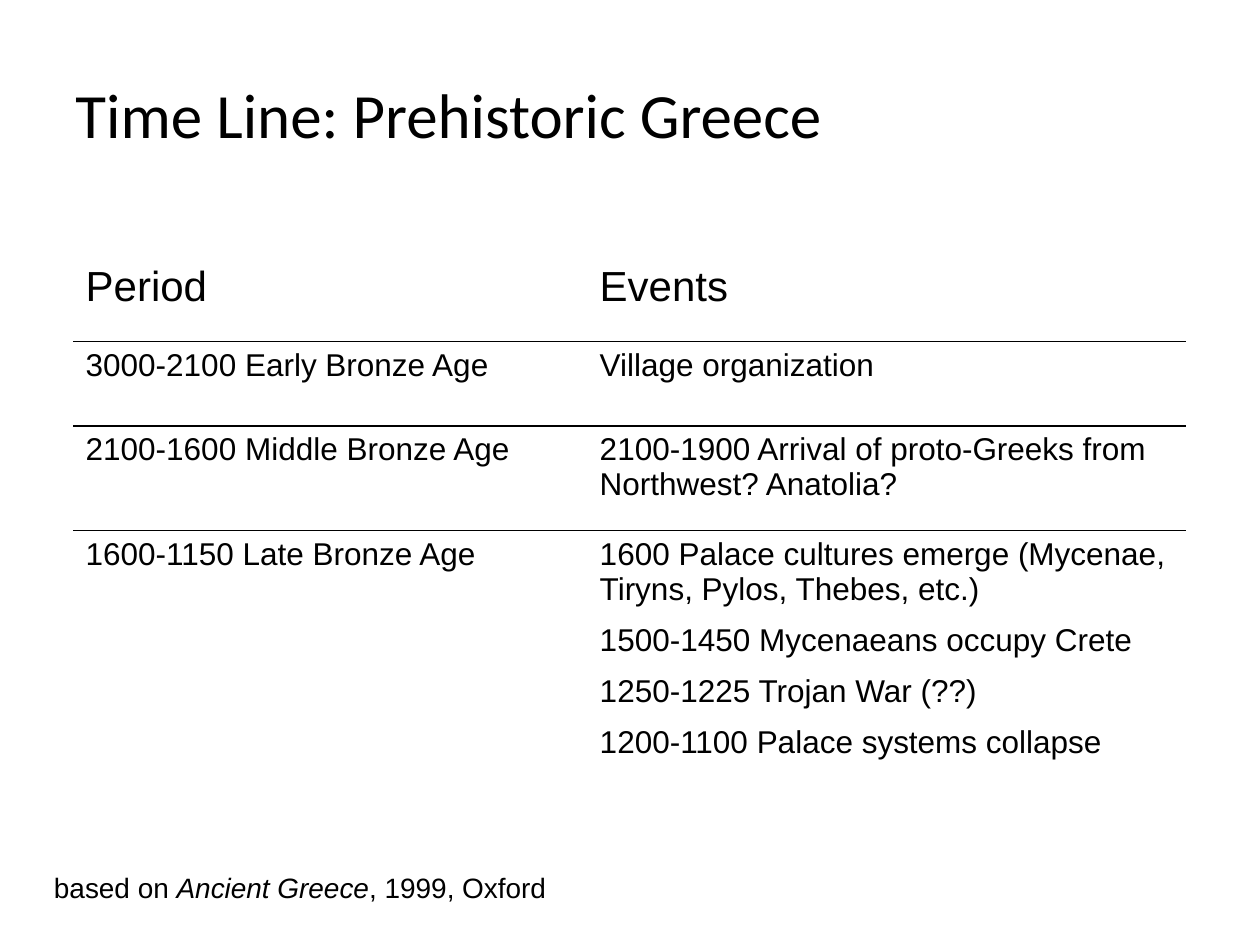
from lxml.etree import SubElement
from pptx import Presentation
from pptx.dml.color import RGBColor
from pptx.enum.text import MSO_ANCHOR
from pptx.oxml.ns import qn
from pptx.util import Inches, Pt

BLACK = RGBColor(0, 0, 0)

TITLE = "Time Line: Prehistoric Greece"
HEADINGS = ("Period", ["Events"])
PERIODS = [
    ("3000-2100 Early Bronze Age", ["Village organization"]),
    ("2100-1600 Middle Bronze Age",
     ["2100-1900 Arrival of proto-Greeks from Northwest? Anatolia?"]),
    ("1600-1150 Late Bronze Age",
     ["1600 Palace cultures emerge (Mycenae, Tiryns, Pylos, Thebes, etc.)",
      "1500-1450 Mycenaeans occupy Crete",
      "1250-1225 Trojan War (??)",
      "1200-1100 Palace systems collapse"]),
]
CREDIT = [("based on ", False), ("Ancient Greece", True), (", 1999, Oxford", False)]

COLUMN_WIDTHS = (4.08, 4.75)
ROW_HEIGHTS = (0.67, 0.67, 0.83, 2.05)
TABLE_LEFT, TABLE_TOP = 0.58, 2.04


def write(frame, paragraphs, size, font="Arial", gap=0):
    """Fill a text frame; each paragraph is a list of (text, italic) runs."""
    for index, runs in enumerate(paragraphs):
        paragraph = frame.paragraphs[0] if index == 0 else frame.add_paragraph()
        if index:
            paragraph.space_before = Pt(gap)
        for text, italic in runs:
            run = paragraph.add_run()
            run.text = text
            run.font.name = font
            run.font.size = Pt(size)
            run.font.bold = False
            run.font.italic = italic
            run.font.color.rgb = BLACK


def add_text(slide, box, runs, wrap=True, anchor=MSO_ANCHOR.TOP, **text_format):
    frame = slide.shapes.add_textbox(*map(Inches, box)).text_frame
    frame.word_wrap = wrap
    frame.vertical_anchor = anchor
    write(frame, [runs], **text_format)


def set_borders(cell, ruled_sides):
    """Rule the given sides (T, B) in black and clear the others."""
    properties = cell._tc.get_or_add_tcPr()
    for position, side in enumerate("LRTB"):
        line = SubElement(properties, qn(f"a:ln{side}"), w=str(Pt(1)))
        if side in ruled_sides:
            fill = SubElement(line, qn("a:solidFill"))
            SubElement(fill, qn("a:srgbClr"), val=str(BLACK))
        else:
            SubElement(line, qn("a:noFill"))
        properties.insert(position, line)


def add_timeline(slide):
    rows = [HEADINGS, *PERIODS]
    table = slide.shapes.add_table(
        len(rows), len(COLUMN_WIDTHS), Inches(TABLE_LEFT), Inches(TABLE_TOP),
        Inches(sum(COLUMN_WIDTHS)), Inches(sum(ROW_HEIGHTS))).table
    table.first_row = table.horz_banding = False
    for column, width in zip(table.columns, COLUMN_WIDTHS):
        column.width = Inches(width)
    for row, height in zip(table.rows, ROW_HEIGHTS):
        row.height = Inches(height)

    for row_index, (period, events) in enumerate(rows):
        ruled_sides = ("T" if row_index else "") + ("B" if row_index < len(rows) - 1 else "")
        for column_index, lines in enumerate(([period], events)):
            cell = table.cell(row_index, column_index)
            cell.fill.background()
            set_borders(cell, ruled_sides)
            write(cell.text_frame, [[(line, False)] for line in lines],
                  size=18 if row_index else 24, gap=9)


def main():
    deck = Presentation()
    deck.slide_width, deck.slide_height = Inches(10), Inches(7.5)
    slide = deck.slides.add_slide(deck.slide_layouts[6])
    add_text(slide, (0.5, 0.08, 7.42, 1.17), [(TITLE, False)],
             anchor=MSO_ANCHOR.BOTTOM, size=36, font="Calibri")
    add_timeline(slide)
    add_text(slide, (0.33, 6.86, 4.12, 0.37), CREDIT, wrap=False, size=16)
    deck.save("out.pptx")


if __name__ == "__main__":
    main()
